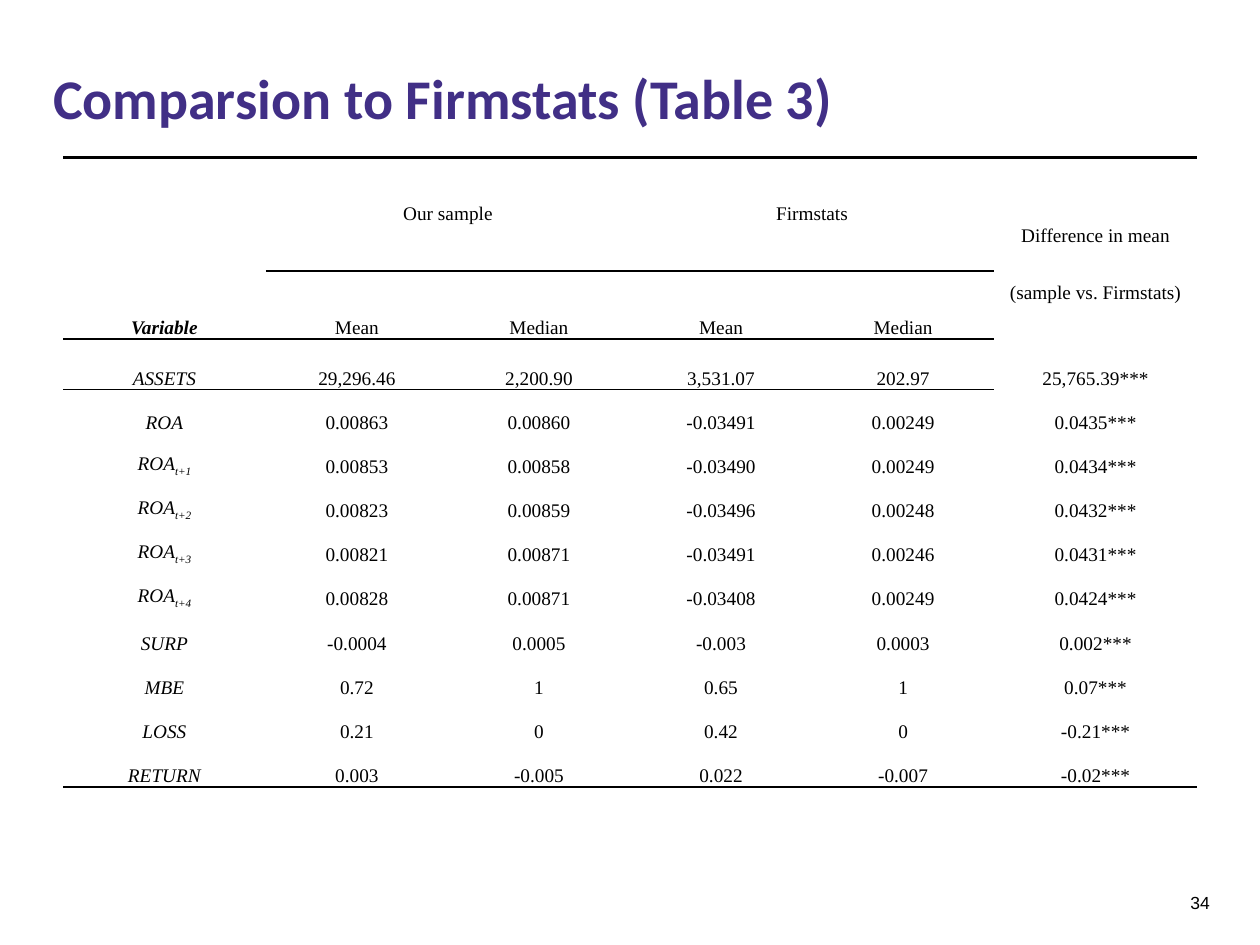
from lxml import etree
from pptx import Presentation
from pptx import util as u
from pptx.dml.color import RGBColor
from pptx.enum import text
from pptx.oxml.ns import qn

INK = "000000"
BODY = {"name": "Times New Roman", "size": u.Pt(11), "bold": False, "italic": False}
PLAIN_TABLE = "{2D5ABB26-0587-4C30-8999-92F81FD0307C}"
COLS = [4.09] + [3.67] * 4 + [4.09]
ROWS = [1.8, 0.1, 1.37, 1.02] + [0.89] * 9
MERGES = [(0, 0, 1, 0), (0, 1, 1, 2), (0, 3, 1, 4), (1, 5, 2, 5)]
HEADS = {
    (0, 1): "Our sample",
    (0, 3): "Firmstats",
    (0, 5): "Difference in mean",
    (1, 5): "(sample vs. Firmstats)",
    (2, 0): "Variable",
    (2, 1): "Mean",
    (2, 2): "Median",
    (2, 3): "Mean",
    (2, 4): "Median",
}
MIDDLE = [(0, 1), (0, 3), (1, 5)]
DATA = [
    ("ASSETS", "29,296.46", "2,200.90", "3,531.07", "202.97", "25,765.39***"),
    ("ROA", "0.00863", "0.00860", "-0.03491", "0.00249", "0.0435***"),
    ("ROA_t+1", "0.00853", "0.00858", "-0.03490", "0.00249", "0.0434***"),
    ("ROA_t+2", "0.00823", "0.00859", "-0.03496", "0.00248", "0.0432***"),
    ("ROA_t+3", "0.00821", "0.00871", "-0.03491", "0.00246", "0.0431***"),
    ("ROA_t+4", "0.00828", "0.00871", "-0.03408", "0.00249", "0.0424***"),
    ("SURP", "-0.0004", "0.0005", "-0.003", "0.0003", "0.002***"),
    ("MBE", "0.72", "1", "0.65", "1", "0.07***"),
    ("LOSS", "0.21", "0", "0.42", "0", "-0.21***"),
    ("RETURN", "0.003", "-0.005", "0.022", "-0.007", "-0.02***"),
]
RULES = {
    (0, "lnT"): (range(6), 2.25),
    (0, "lnB"): (range(1, 5), 1),
    (1, "lnB"): (range(1, 5), 1),
    (2, "lnT"): (range(1, 5), 1),
    (2, "lnB"): (range(5), 1),
    (3, "lnT"): (range(5), 1),
    (12, "lnB"): (range(6), 1),
}


def style(obj, **values):
    """Set each given attribute on an object."""
    for key, value in values.items():
        setattr(obj, key, value)


def paint(font, color, **values):
    """Colour a font from a hex string and set its other values."""
    style(font, **values)
    font.color.rgb = RGBColor.from_string(color)


def frame(tf, anchor):
    """Give a text frame no insets and the wanted anchor."""
    style(tf, margin_left=0, margin_right=0, margin_top=0, margin_bottom=0,
          word_wrap=True, auto_size=text.MSO_AUTO_SIZE.NONE, vertical_anchor=anchor)


def add_title(s, box, words):
    """Place and format the title placeholder."""
    sp = s.shapes.title
    style(sp, **dict(zip(("left", "top", "width", "height"), map(u.Cm, box))))
    frame(sp.text_frame, text.MSO_ANCHOR.TOP)
    p = sp.text_frame.paragraphs[0]
    p.alignment = text.PP_ALIGN.LEFT
    r = p.add_run()
    r.text = words
    paint(r.font, "412F86", name="Calibri", size=u.Pt(32), bold=True)


def add_page_number(s, box, number):
    """Place the page number, aligned right."""
    tf = s.shapes.add_textbox(*map(u.Cm, box)).text_frame
    frame(tf, text.MSO_ANCHOR.TOP)
    p = tf.paragraphs[0]
    p.alignment = text.PP_ALIGN.RIGHT
    r = p.add_run()
    r.text = number
    paint(r.font, INK, name="Arial", size=u.Pt(10))


def add_rule(cell, side, width):
    """Draw one solid border of a cell."""
    ln = etree.SubElement(cell._tc.get_or_add_tcPr(), qn("a:" + side), w=str(u.Pt(width)))
    fill = etree.SubElement(ln, qn("a:solidFill"))
    etree.SubElement(fill, qn("a:srgbClr"), val=INK)


def write_cell(cell, words, head, anchor):
    """Write a cell, setting the part after an underscore as a subscript."""
    style(cell, margin_left=u.Cm(0.18), margin_right=u.Cm(0.18), margin_top=0,
          margin_bottom=0, vertical_anchor=anchor)
    cell.fill.background()
    p = cell.text_frame.paragraphs[0]
    p.alignment = text.PP_ALIGN.CENTER
    for i, part in enumerate(words.split("_") if words else []):
        r = p.add_run()
        r.text = part
        paint(r.font, INK, **{**BODY, **head})
        if i:
            r.font._element.set("baseline", "-25000")
    if not words:
        etree.SubElement(p._p, qn("a:endParaRPr"), sz="1100")


def add_comparison(s, left, top):
    """Build the comparison table from its top left corner."""
    size = u.Cm(sum(COLS)), u.Cm(sum(ROWS))
    shape = s.shapes.add_table(len(ROWS), len(COLS), u.Cm(left), u.Cm(top), *size)
    table = shape.table
    style(table, first_row=False, horz_banding=False)
    table._tbl.tblPr.find(qn("a:tableStyleId")).text = PLAIN_TABLE
    for col, width in zip(table.columns, COLS):
        col.width = u.Cm(width)
    for row, height in zip(table.rows, ROWS):
        row.height = u.Cm(height)
    for r1, c1, r2, c2 in MERGES:
        table.cell(r1, c1).merge(table.cell(r2, c2))
    for (row, side), (cols, width) in RULES.items():
        for col in cols:
            add_rule(table.cell(row, col), side, width)
    for row in range(len(ROWS)):
        for col in range(len(COLS)):
            words = DATA[row - 3][col] if row > 2 else HEADS.get((row, col), "")
            head = {"italic": col == 0, "bold": (row, col) == (2, 0)}
            anchor = text.MSO_ANCHOR.MIDDLE if (row, col) in MIDDLE else text.MSO_ANCHOR.BOTTOM
            write_cell(table.cell(row, col), words, head, anchor)


def main():
    """Build the slide and save it."""
    prs = Presentation()
    style(prs, slide_width=u.Cm(25.4), slide_height=u.Cm(19.05))
    s = prs.slides.add_slide(prs.slide_layouts[5])
    add_page_number(s, (23.5, 17.98, 0.89, 0.43), "34")
    add_title(s, (1.07, 1.27, 23.22, 2.54), "Comparsion to Firmstats (Table 3)")
    add_comparison(s, 1.27, 3.18)
    prs.save("out.pptx")


if __name__ == "__main__":
    main()
